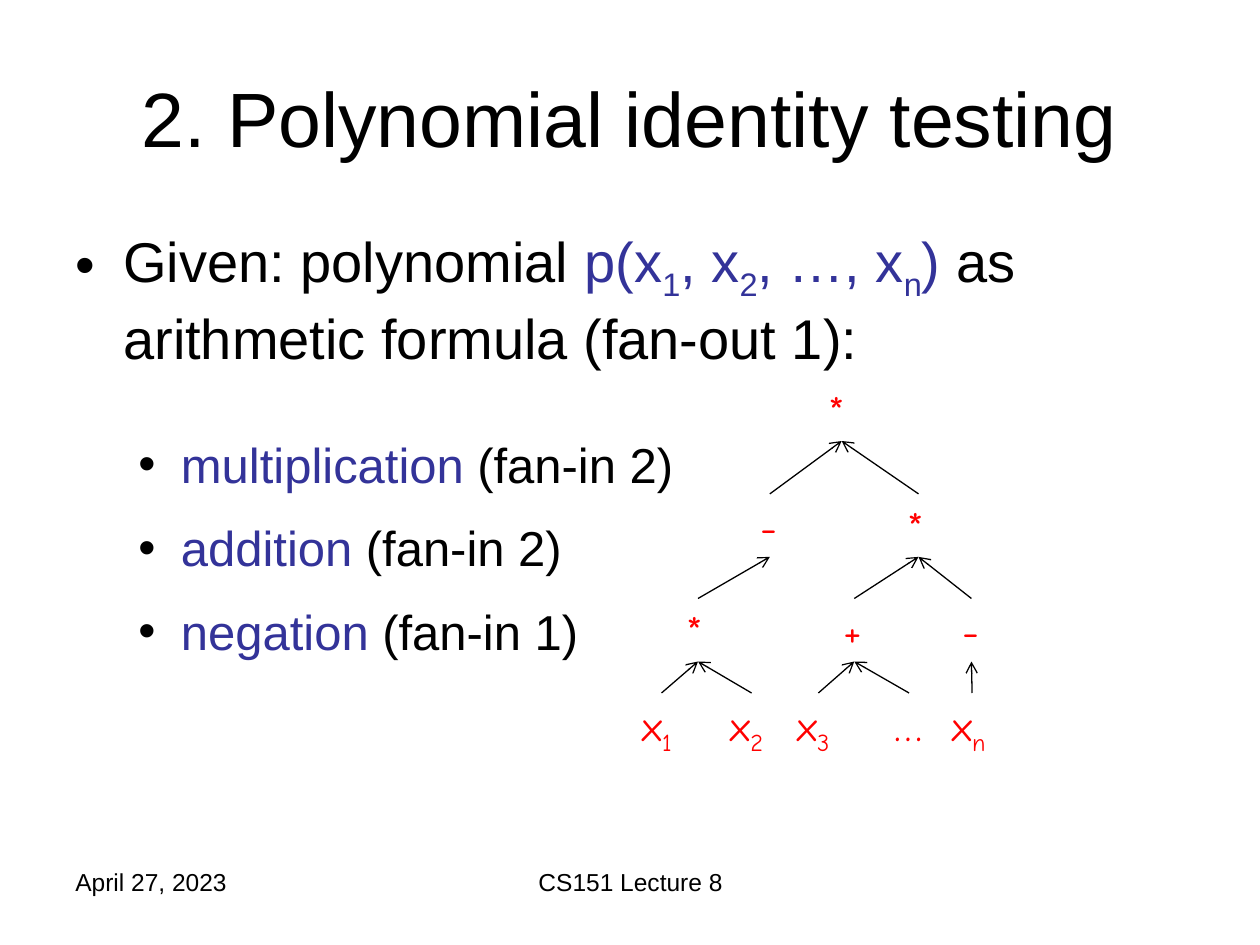
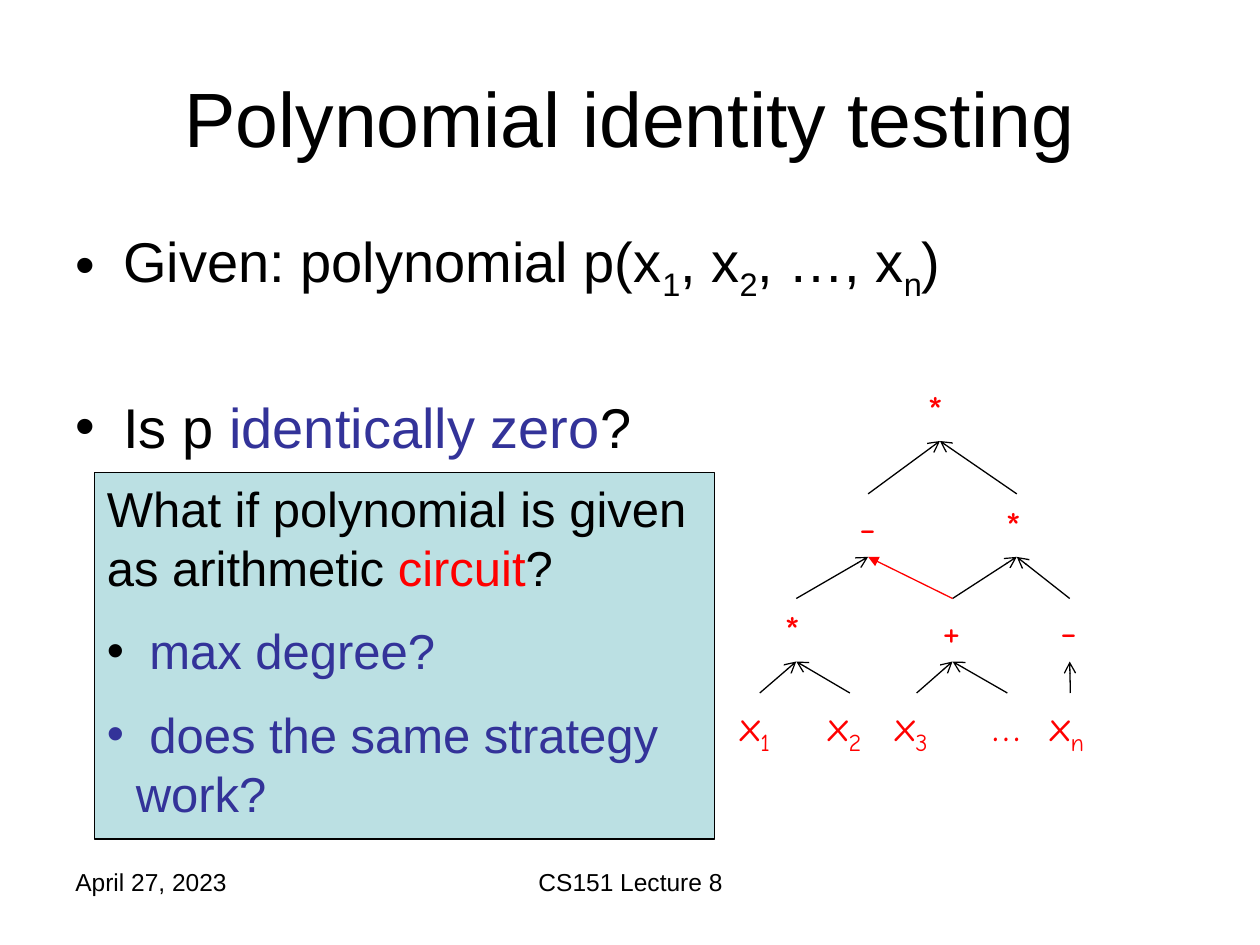
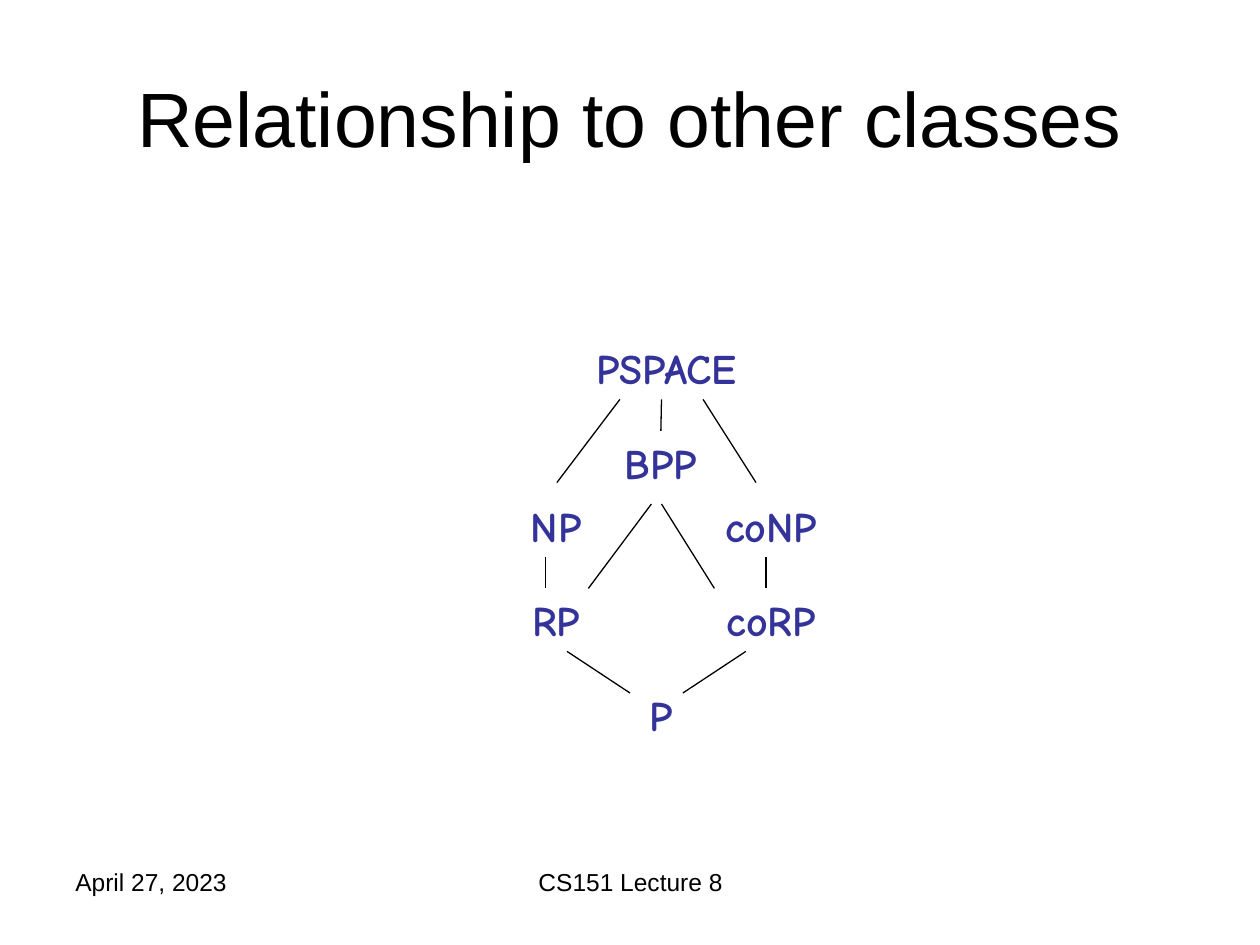
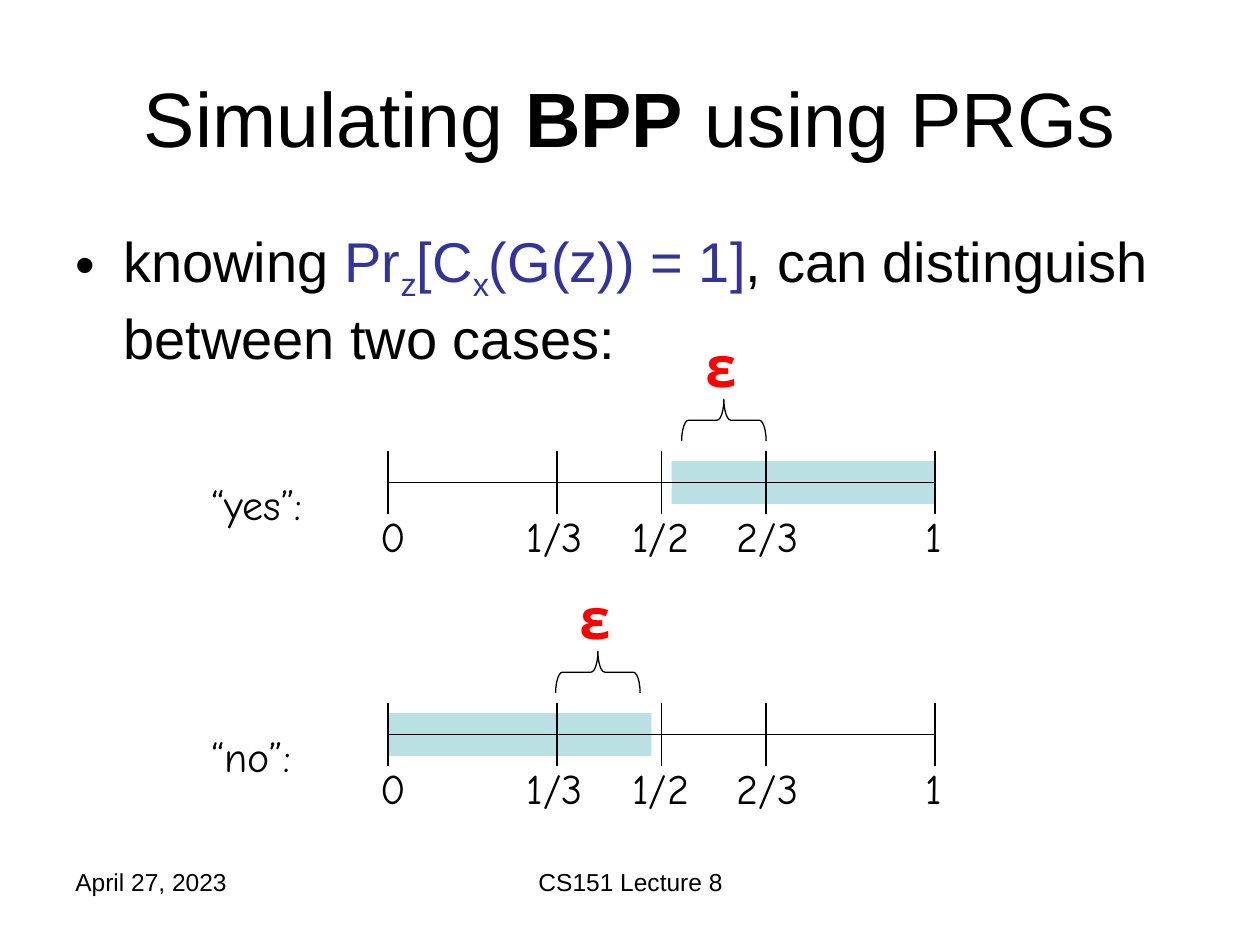
from dataclasses import dataclass

from lxml.etree import SubElement
from pptx import Presentation
from pptx.dml.color import RGBColor
from pptx.enum.shapes import MSO_CONNECTOR, MSO_SHAPE
from pptx.enum.text import MSO_ANCHOR, MSO_AUTO_SIZE, PP_ALIGN
from pptx.oxml.ns import qn
from pptx.util import Inches, Pt


@dataclass(frozen=True)
class Theme:
    ink: str = "000000"
    blue: str = "333399"
    red: str = "FF0000"
    teal: str = "BBE0E3"
    font: str = "Arial"
    hand_font: str = "Comic Neue"
    title_size: int = 44
    body_size: int = 32
    list_size: int = 28
    label_size: int = 24
    footer_size: int = 14
    line_width: float = 0.75


THEME = Theme()
TOP, LEFT, BOTTOM, RIGHT = range(4)  # connection sites of a rectangle
BODY_BOX = (0.5, 1.75, 9, 4.95)
BODY_INDENT, LIST_INDENT = 0.38, 0.23


# Text
@dataclass
class Run:
    text: str
    color: str = THEME.ink
    sub: bool = False
    bold: bool = False


@dataclass
class Para:
    runs: list
    indent: float = 0  # a hanging indent brings a bullet
    space: float = 0


def blue(text, sub=False):
    return Run(text, THEME.blue, sub)


def set_attributes(target, values):
    for name, value in values.items():
        setattr(target, name, value)


def subscripted(text, color=THEME.ink):
    """Runs for text in which each part after "_" starts with one subscript."""
    first, *parts = text.split("_")
    runs = [Run(first, color)]
    for part in parts:
        runs += [Run(part[0], color, sub=True), Run(part[1:], color)]
    return [run for run in runs if run.text]


def add_bullet(paragraph, indent):
    properties = paragraph._p.get_or_add_pPr()
    properties.set("marL", str(Inches(indent)))
    properties.set("indent", str(-Inches(indent)))
    SubElement(properties, qn("a:buFont")).set("typeface", "Arial")
    SubElement(properties, qn("a:buChar")).set("char", "•")


def fill_text(frame, paras, size, font=THEME.font, align=PP_ALIGN.LEFT, **frame_format):
    set_attributes(frame, {"word_wrap": True, "vertical_anchor": MSO_ANCHOR.TOP,
                           **frame_format})
    for index, para in enumerate(paras):
        paragraph = frame.add_paragraph() if index else frame.paragraphs[0]
        set_attributes(paragraph, {"alignment": align, "space_before": Pt(para.space)})
        if para.indent:
            add_bullet(paragraph, para.indent)
        for part in para.runs:
            run = paragraph.add_run()
            run.text = part.text
            set_attributes(run.font, {"name": font, "size": Pt(size), "bold": part.bold})
            run.font.color.rgb = RGBColor.from_string(part.color)
            if part.sub:
                run.font._element.set("baseline", "-25000")


def add_text(slide, box, paras, size, **text_format):
    holder = slide.shapes.add_textbox(*map(Inches, box))
    fill_text(holder.text_frame, paras, size, **text_format)
    return holder


def add_label(slide, box, runs, size=THEME.label_size, **text_format):
    return add_text(slide, box, [Para(runs)], size, font=THEME.hand_font, **text_format)


# Shapes and lines
def style_line(line, color=THEME.ink):
    line.color.rgb = RGBColor.from_string(color)
    line.width = Pt(THEME.line_width)


def add_figure(slide, kind, box, fill=None, outlined=True):
    figure = slide.shapes.add_shape(kind, *map(Inches, box))
    figure.shadow.inherit = False
    if fill:
        figure.fill.solid()
        figure.fill.fore_color.rgb = RGBColor.from_string(fill)
    else:
        figure.fill.background()
    if outlined:
        style_line(figure.line)
    else:
        figure.line.fill.background()
    return figure


def add_line(slide, start=(0, 0), end=(0, 0), color=THEME.ink, head=None):
    line = slide.shapes.add_connector(MSO_CONNECTOR.STRAIGHT, *map(Inches, (*start, *end)))
    style_line(line.line, color)
    if head:
        SubElement(line.line._get_or_add_ln(), qn("a:tailEnd")).set("type", head)
    SubElement(line._element.spPr, qn("a:effectLst"))
    return line


def add_input_arrow(slide, child, parent, color=THEME.ink, head="arrow"):
    arrow = add_line(slide, color=color, head=head)
    arrow.begin_connect(child, TOP)
    arrow.end_connect(parent, BOTTOM)


# Shared slide frame
def new_slide(deck, title_runs):
    slide = deck.slides.add_slide(deck.slide_layouts[6])
    add_text(slide, (0.5, 0.3, 9, 1.25), [Para(title_runs)], THEME.title_size,
             align=PP_ALIGN.CENTER, vertical_anchor=MSO_ANCHOR.MIDDLE)
    add_text(slide, (0.5, 6.83, 2.33, 0.52), [Para([Run("April 27, 2023")])],
             THEME.footer_size)
    add_text(slide, (3.42, 6.83, 3.17, 0.52), [Para([Run("CS151 Lecture 8")])],
             THEME.footer_size, align=PP_ALIGN.CENTER)
    return slide


# Arithmetic formula tree: gate -> (label, left, top, width)
GATES = {
    "root": ("*", 6.48, 3, 0.4),
    "negate": ("-", 5.94, 3.92, 0.34),
    "times": ("*", 7.1, 3.92, 0.38),
    "product": ("*", 5.35, 4.75, 0.38),
    "sum": ("+", 6.6, 4.75, 0.36),
    "minus": ("-", 7.54, 4.75, 0.34),
    "x1": ("x_1", 5, 5.5, 0.5),
    "x2": ("x_2", 5.7, 5.5, 0.53),
    "x3": ("x_3", 6.23, 5.5, 0.53),
    "dots": ("…", 7, 5.5, 0.43),
    "xn": ("x_n", 7.46, 5.5, 0.51),
}
INPUTS = {
    "root": ("negate", "times"),
    "negate": ("product",),
    "times": ("sum", "minus"),
    "product": ("x1", "x2"),
    "sum": ("x3", "dots"),
    "minus": ("xn",),
}


def add_formula_tree(slide, shift=0):
    gates = {}
    for gate, (label, left, top, width) in GATES.items():
        gates[gate] = add_label(slide, (left + shift, top, width, 0.5),
                                subscripted(label, THEME.red), word_wrap=False,
                                auto_size=MSO_AUTO_SIZE.SHAPE_TO_FIT_TEXT)
    for parent, children in INPUTS.items():
        for child in children:
            add_input_arrow(slide, gates[child], gates[parent])
    return gates


def build_formula_slide(deck):
    slide = new_slide(deck, [Run("2. Polynomial identity testing")])
    given = [Run("Given: polynomial "), *subscripted("p(x_1, x_2, …, x_n)", THEME.blue),
             Run(" as arithmetic formula (fan-out 1):")]
    add_text(slide, BODY_BOX, [Para(given, BODY_INDENT)], THEME.body_size)
    add_formula_tree(slide)
    operations = [("multiplication", 2), ("addition", 2), ("negation", 1)]
    add_text(slide, (1, 3.4, 4.75, 1.97),
             [Para([Run(" "), blue(name), Run(f" (fan-in {fan_in})")],
                   LIST_INDENT, 14 if index else 0)
              for index, (name, fan_in) in enumerate(operations)], THEME.list_size)


def build_circuit_slide(deck):
    slide = new_slide(deck, [Run("Polynomial identity testing")])
    add_text(slide, BODY_BOX, [
        Para(subscripted("Given: polynomial p(x_1, x_2, …, x_n)"), BODY_INDENT),
        Para([Run("Is p "), blue("identically zero"), Run("?")], BODY_INDENT, 51),
    ], THEME.body_size)
    gates = add_formula_tree(slide, shift=0.78)
    question = add_figure(slide, MSO_SHAPE.RECTANGLE, (0.75, 3.75, 4.92, 2.91), THEME.teal)
    fill_text(question.text_frame, [
        Para([Run("What if polynomial is given as arithmetic "),
              Run("circuit", THEME.red), Run("?")]),
        Para([Run(" "), blue("max degree?")], LIST_INDENT, 14),
        Para([blue(" does the same strategy work?")], LIST_INDENT, 14),
    ], THEME.list_size)
    # The second use of the sum turns the formula into a circuit
    add_input_arrow(slide, gates["sum"], gates["negate"], THEME.red, "triangle")


# Complexity classes: name -> (left, top, width)
CLASSES = {
    "P": (4.83, 5.42, 0.83),
    "RP": (4, 4.67, 0.83),
    "coRP": (5.58, 4.67, 1.08),
    "NP": (4, 3.92, 0.83),
    "coNP": (5.58, 3.92, 1.08),
    "PSPACE": (4.5, 2.67, 1.58),
    "BPP": (4.83, 3.42, 0.83),
}
INCLUSIONS = [
    ((5, 5.5), (4.5, 5.17)),
    ((5.42, 5.5), (5.92, 5.17)),
    ((4.33, 4.67), (4.33, 4.42)),
    ((6.08, 4.67), (6.08, 4.42)),
    ((4.67, 4.67), (5.17, 4)),
    ((5.67, 4.67), (5.25, 4)),
    ((4.42, 3.83), (4.92, 3.17)),
    ((6, 3.83), (5.58, 3.17)),
]


def build_classes_slide(deck):
    slide = new_slide(deck, [Run("Relationship to other classes")])
    classes = {name: add_label(slide, (left, top, width, 0.5),
                               [Run(name, THEME.blue, bold=True)], align=PP_ALIGN.CENTER)
               for name, (left, top, width) in CLASSES.items()}
    for smaller, larger in INCLUSIONS:
        add_line(slide, smaller, larger)
    bpp_in_pspace = add_line(slide, (5.25, 3.42), (5.25, 3.17))
    bpp_in_pspace.begin_connect(classes["BPP"], TOP)


# Probability scales: label -> (tick x, label left, label width)
TICKS = {
    "0": (3.08, 2.92, 0.5),
    "1/3": (4.42, 4.08, 0.75),
    "1/2": (5.25, 4.92, 0.75),
    "2/3": (6.08, 5.75, 0.92),
    "1": (7.42, 7.25, 0.92),
}
SCALE_START, SCALE_END = TICKS["0"][0], TICKS["1"][0]


def add_scale(slide, case, y, band_left, brace_left):
    band = add_figure(slide, MSO_SHAPE.RECTANGLE, (band_left, y - 0.17, 2.09, 0.34),
                      THEME.teal, outlined=False)
    axis = add_line(slide, (SCALE_START, y), (SCALE_END, y))
    if band_left == SCALE_START:
        axis.begin_connect(band, LEFT)
    else:
        axis.end_connect(band, RIGHT)
    for value, (x, left, width) in TICKS.items():
        add_line(slide, (x, y - 0.25), (x, y + 0.25))
        add_label(slide, (left, y + 0.17, width, 0.5), [Run(value)])
    add_label(slide, (1.58, y - 0.08, 1.17, 0.5), [Run(f"“{case}”:")])
    # Gap between the band's edge and the nearest third
    brace = add_figure(slide, MSO_SHAPE.LEFT_BRACE, (brace_left, y - 0.83, 0.33, 0.67))
    brace.rotation = 90
    brace.adjustments[0], brace.adjustments[1] = 0.167, 0.5
    add_label(slide, (brace_left - 0.08, y - 1.25, 0.42, 0.63),
              [Run("ε", THEME.red, bold=True)], THEME.body_size, align=PP_ALIGN.CENTER,
              word_wrap=False, auto_size=MSO_AUTO_SIZE.SHAPE_TO_FIT_TEXT)


def build_simulation_slide(deck):
    slide = new_slide(deck, [Run("Simulating "), Run("BPP", bold=True), Run(" using PRGs")])
    knowing = [Run("knowing "), *subscripted("Pr_z[C_x(G(z)) = 1]", THEME.blue),
               Run(", can distinguish between two cases:")]
    add_text(slide, BODY_BOX, [Para(knowing, BODY_INDENT)], THEME.body_size)
    add_scale(slide, "yes", 3.83, band_left=5.33, brace_left=5.58)
    add_scale(slide, "no", 5.83, band_left=SCALE_START, brace_left=4.58)


def main():
    deck = Presentation()
    set_attributes(deck, {"slide_width": Inches(10), "slide_height": Inches(7.5)})
    build_formula_slide(deck)
    build_circuit_slide(deck)
    build_classes_slide(deck)
    build_simulation_slide(deck)
    deck.save("out.pptx")


if __name__ == "__main__":
    main()
